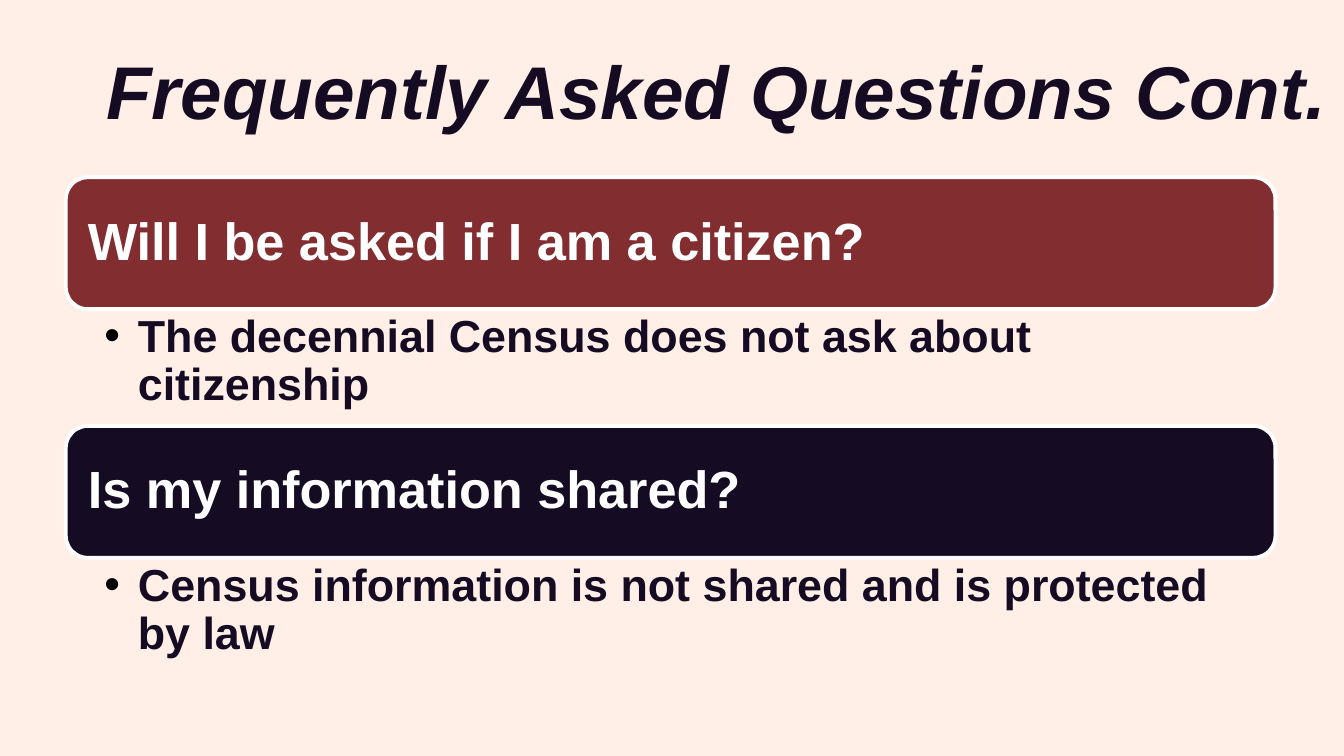
from dataclasses import dataclass

from lxml.etree import SubElement
from pptx import Presentation
from pptx.dml.color import RGBColor
from pptx.enum.shapes import MSO_SHAPE
from pptx.enum.text import MSO_ANCHOR, PP_ALIGN
from pptx.oxml.ns import qn
from pptx.util import Pt


@dataclass(frozen=True)
class Theme:
    font: str = "Arial"
    background: str = "FFEFE7"
    ink: str = "150B23"
    maroon: str = "822E31"
    white: str = "FFFFFF"
    bullet: str = "000000"
    title_size: float = 40
    question_size: float = 28
    answer_size: float = 24


THEME = Theme()

LEFT, TOP, WIDTH = 35.3, 95, 648
QUESTION_HEIGHT, ANSWER_HEIGHT = 70.6, 62.6
FAQS = [
    ("Will I be asked if I am a citizen?",
     "The decennial Census does not ask about citizenship", THEME.maroon),
    ("Is my information shared?",
     "Census information is not shared and is protected by law", THEME.ink),
]


def rgb(value):
    return RGBColor.from_string(value)


def set_frame(frame, anchor, left, top, right, bottom):
    frame.word_wrap = True
    frame.vertical_anchor = anchor
    frame.margin_left, frame.margin_top = Pt(left), Pt(top)
    frame.margin_right, frame.margin_bottom = Pt(right), Pt(bottom)


def add_bold_run(paragraph, wording, size, color, italic=False):
    run = paragraph.add_run()
    run.text = wording
    run.font.name = THEME.font
    run.font.size = Pt(size)
    run.font.bold = True
    run.font.italic = italic
    run.font.color.rgb = rgb(color)


def add_bullet(paragraph, indent):
    properties = paragraph._p.get_or_add_pPr()
    properties.set("marL", str(Pt(indent)))
    properties.set("indent", str(-Pt(indent)))
    color = SubElement(properties, qn("a:buClr"))
    SubElement(color, qn("a:srgbClr"), val=THEME.bullet)
    SubElement(properties, qn("a:buFont"), typeface=THEME.font)
    SubElement(properties, qn("a:buChar"), char="•")


def add_title(slide, wording):
    title = slide.shapes.add_textbox(Pt(0), Pt(14.4), Pt(767.5), Pt(67.7))
    set_frame(title.text_frame, MSO_ANCHOR.MIDDLE, 7.2, 7.2, 7.2, 7.2)
    heading = title.text_frame.paragraphs[0]
    heading.alignment = PP_ALIGN.CENTER
    add_bold_run(heading, wording, THEME.title_size, THEME.ink, italic=True)


def add_question(slide, top, wording, fill):
    banner = slide.shapes.add_shape(
        MSO_SHAPE.ROUNDED_RECTANGLE, Pt(LEFT), Pt(top), Pt(WIDTH), Pt(QUESTION_HEIGHT))
    banner.shadow.inherit = False
    banner.fill.solid()
    banner.fill.fore_color.rgb = rgb(fill)
    banner.line.color.rgb = rgb(THEME.white)
    banner.line.width = Pt(2)
    set_frame(banner.text_frame, MSO_ANCHOR.MIDDLE, 8.4, 8.4, 8.4, 8.4)
    question = banner.text_frame.paragraphs[0]
    question.alignment = PP_ALIGN.LEFT
    question.line_spacing = 0.9
    add_bold_run(question, wording, THEME.question_size, THEME.white)


def add_answer(slide, top, wording):
    body = slide.shapes.add_textbox(Pt(LEFT), Pt(top), Pt(WIDTH), Pt(ANSWER_HEIGHT))
    set_frame(body.text_frame, MSO_ANCHOR.TOP, 20.6, 2.5, 13.7, 2.5)
    answer = body.text_frame.paragraphs[0]
    answer.level = 1
    answer.line_spacing = 0.9
    add_bullet(answer, 18)
    add_bold_run(answer, wording, THEME.answer_size, THEME.ink)


def main():
    deck = Presentation()
    deck.slide_width, deck.slide_height = Pt(720), Pt(405)
    slide = deck.slides.add_slide(deck.slide_layouts[6])
    slide.background.fill.solid()
    slide.background.fill.fore_color.rgb = rgb(THEME.background)

    add_title(slide, "Frequently Asked Questions Cont.")
    for row, (question, answer, fill) in enumerate(FAQS):
        top = TOP + row * (QUESTION_HEIGHT + ANSWER_HEIGHT)
        add_question(slide, top, question, fill)
        add_answer(slide, top + QUESTION_HEIGHT, answer)
    deck.save("out.pptx")


if __name__ == "__main__":
    main()
